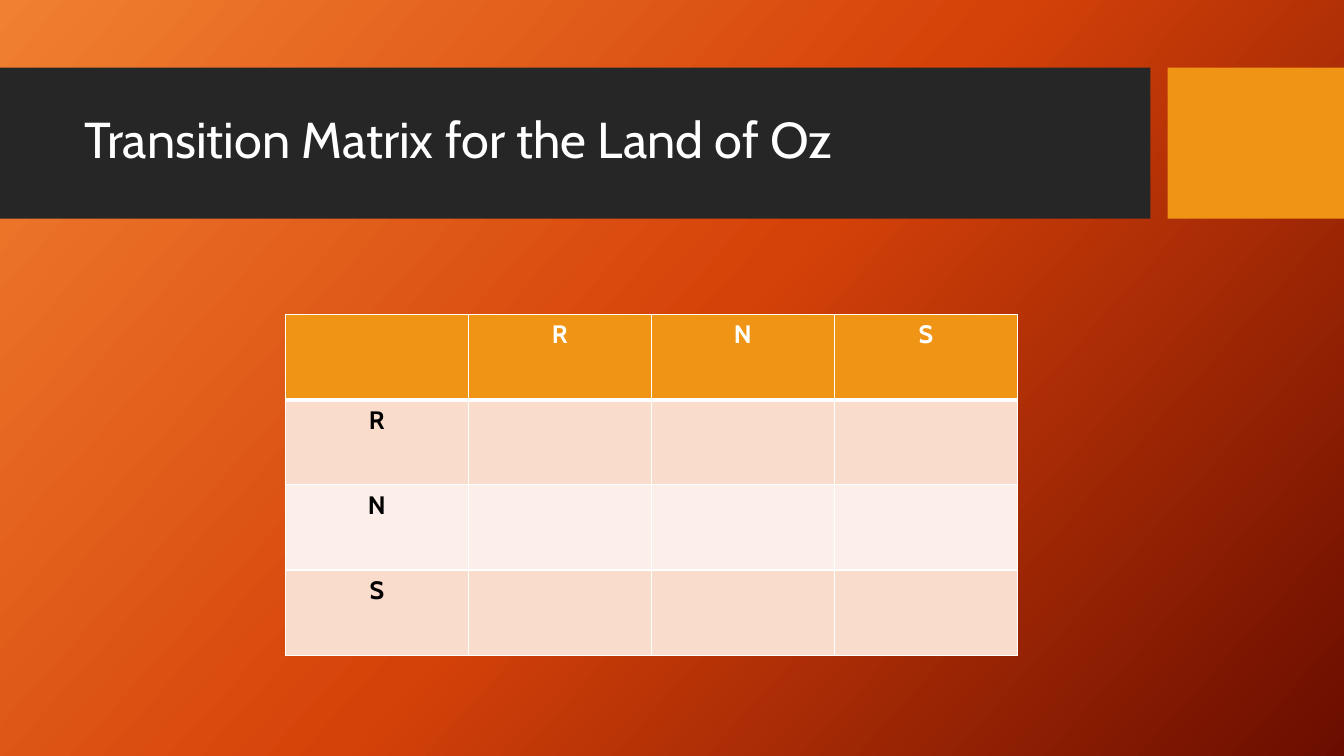
from copy import deepcopy
from dataclasses import dataclass

from lxml.etree import SubElement
from pptx import Presentation
from pptx.dml.color import RGBColor
from pptx.enum.shapes import MSO_SHAPE
from pptx.enum.text import MSO_ANCHOR, MSO_AUTO_SIZE, PP_ALIGN
from pptx.oxml.ns import qn
from pptx.slide import Slide
from pptx.table import _Cell
from pptx.util import Inches, Pt

FONT = "Cabin"
COLORS = {
    "glow": "F18031",
    "ember": "D54209",
    "maroon": "6A0D00",
    "charcoal": "262626",
    "amber": "F09415",
    "peach": "F9DCCC",
    "blush": "FCEEE8",
    "white": "FFFFFF",
    "black": "000000",
}
STATES = ["R", "N", "S"]


@dataclass
class Band:
    left: float
    width: float
    color: str


BANDS = [Band(0, 11.41, "charcoal"), Band(11.58, 1.75, "amber")]


def rgb(name: str) -> RGBColor:
    return RGBColor.from_string(COLORS[name])


def paint_background(slide: Slide, names: list[str]) -> None:
    """Fill the background with evenly spaced gradient stops."""
    fill = slide.background.fill
    fill.gradient()
    fill.gradient_angle = 318
    stop_list = slide.element.find(".//" + qn("a:gsLst"))
    while len(stop_list) < len(names):
        stop_list.append(deepcopy(stop_list[0]))
    for index, (stop, name) in enumerate(zip(fill.gradient_stops, names)):
        stop.position = index / (len(names) - 1)
        stop.color.rgb = rgb(name)


def add_band(slide: Slide, band: Band) -> None:
    bar = slide.shapes.add_shape(
        MSO_SHAPE.RECTANGLE, Inches(band.left), Inches(0.67), Inches(band.width), Inches(1.5)
    )
    bar.shadow.inherit = False
    bar.fill.solid()
    bar.fill.fore_color.rgb = rgb(band.color)
    bar.line.fill.background()


def add_title(slide: Slide, text: str) -> None:
    """Format the title placeholder and bring it in front of the bands."""
    title = slide.shapes.title
    slide.shapes.element.append(title.element)
    title.left, title.top = Inches(0.74), Inches(0.82)
    title.width, title.height = Inches(10.51), Inches(1.18)
    frame = title.text_frame
    frame.text = text
    frame.word_wrap = True
    frame.auto_size = MSO_AUTO_SIZE.NONE
    frame.vertical_anchor = MSO_ANCHOR.MIDDLE
    heading = frame.paragraphs[0]
    heading.alignment = PP_ALIGN.LEFT
    heading.line_spacing = 0.9
    heading.font.name = FONT
    heading.font.size = Pt(36)
    heading.font.color.rgb = rgb("white")


def set_borders(cell: _Cell, top: float, bottom: float) -> None:
    """Draw white borders; the side ones are one point wide."""
    properties = cell._tc.get_or_add_tcPr()
    for side, width in {"L": 1, "R": 1, "T": top, "B": bottom}.items():
        border = SubElement(properties, qn(f"a:ln{side}"), w=str(Pt(width)))
        SubElement(SubElement(border, qn("a:solidFill")), qn("a:srgbClr"), val=COLORS["white"])


def add_matrix(slide: Slide, states: list[str]) -> None:
    """Add an empty transition matrix labelled by state on both axes."""
    size = len(states) + 1
    matrix = slide.shapes.add_table(
        size, size, Inches(2.83), Inches(3.12), Inches(7.26), Inches(3.38)
    ).table
    labels = ["", *states]
    for row in range(size):
        for column in range(size):
            cell = matrix.cell(row, column)
            set_borders(cell, 3 if row == 1 else 1, 3 if row == 0 else 1)
            cell.fill.solid()
            body_color = "peach" if row % 2 else "blush"
            cell.fill.fore_color.rgb = rgb("amber" if row == 0 else body_color)
            if row and column:
                continue
            cell.text = labels[row or column]
            label = cell.text_frame.paragraphs[0]
            label.alignment = PP_ALIGN.CENTER
            label.font.name = FONT
            label.font.size = Pt(18)
            label.font.bold = True
            label.font.color.rgb = rgb("white" if row == 0 else "black")


def main() -> None:
    deck = Presentation()
    deck.slide_width, deck.slide_height = Inches(13.33), Inches(7.5)
    slide = deck.slides.add_slide(deck.slide_layouts.get_by_name("Title Only"))
    paint_background(slide, ["glow", "ember", "maroon"])
    for band in BANDS:
        add_band(slide, band)
    add_title(slide, "Transition Matrix for the Land of Oz")
    add_matrix(slide, STATES)
    deck.save("out.pptx")


if __name__ == "__main__":
    main()
